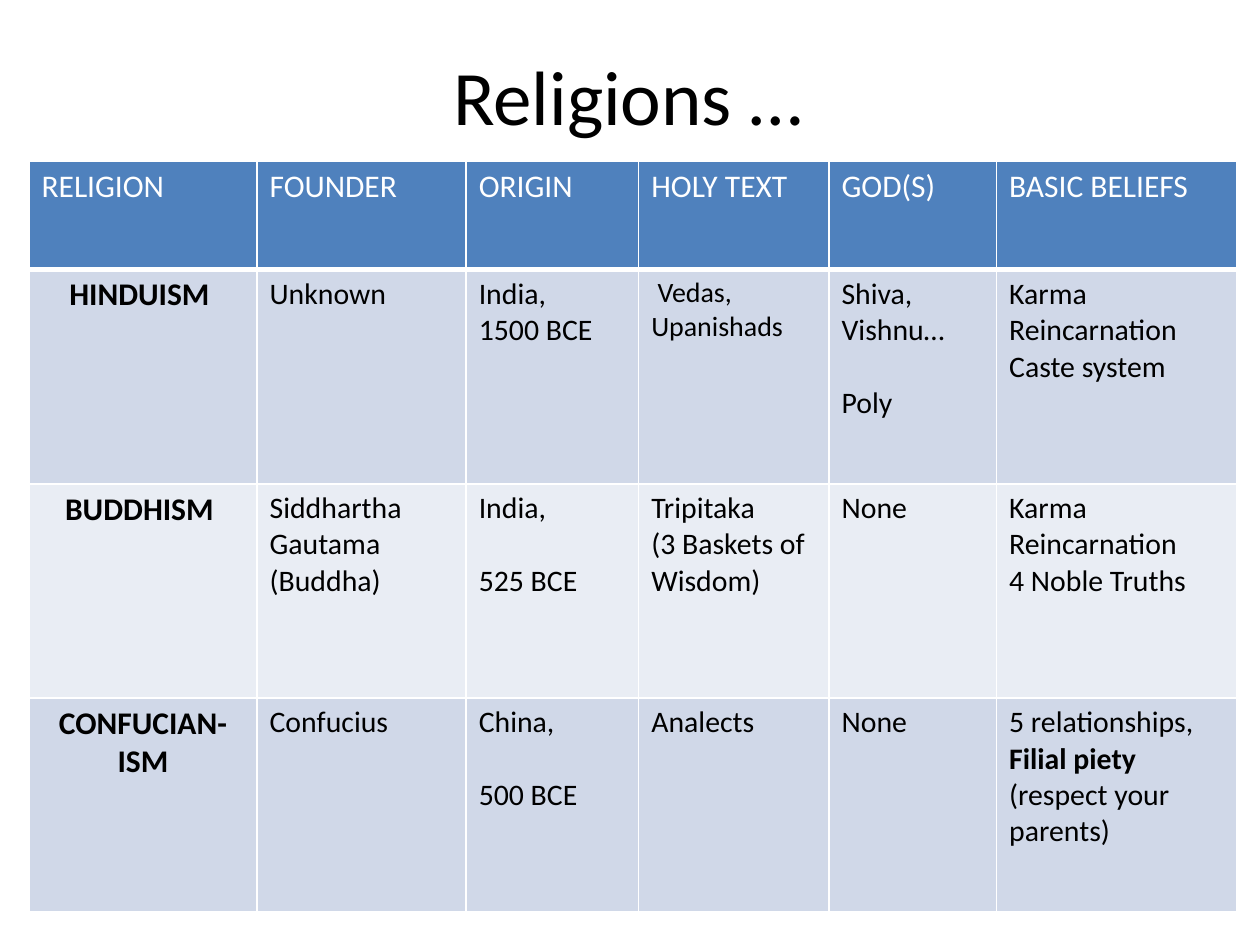
from dataclasses import dataclass

from lxml import etree
from pptx import Presentation
from pptx import util as u
from pptx.dml.color import RGBColor
from pptx.enum import text
from pptx.oxml import ns

FONT = "Calibri"
COLOURS = {
    "ink": "000000",
    "white": "FFFFFF",
    "header": "4F81BD",
    "odd_row": "D0D8E8",
    "even_row": "E9EDF4",
}
COLUMN_WIDTHS = [1.81, 1.66, 1.37, 1.51, 1.33, 1.91]
HEADER_HEIGHT, ROW_HEIGHT = 0.86, 1.7
BODY_SIZE = 17
LINE_GAP = 20.75  # one line of body text, in points
HEADINGS = ["RELIGION", "FOUNDER", "ORIGIN", "HOLY TEXT", "GOD(S)", "BASIC BELIEFS"]


@dataclass
class Line:
    words: str
    size: float = BODY_SIZE
    bold: str = ""  # leading words set in bold
    gap: float = 0


@dataclass
class Religion:
    name: str
    details: list[list[Line]]


RELIGIONS = [
    Religion("HINDUISM ", [
        [Line("Unknown")],
        [Line("India,"), Line("1500 BCE")],
        [Line(" Vedas,", size=16), Line("Upanishads", size=16)],
        [Line("Shiva, Vishnu…"), Line("Poly", gap=LINE_GAP)],
        [Line("Karma"), Line("Reincarnation"), Line("Caste system")],
    ]),
    Religion("BUDDHISM ", [
        [Line("Siddhartha Gautama"), Line("(Buddha)")],
        [Line("India,"), Line("525 BCE", gap=LINE_GAP)],
        [Line("Tripitaka"), Line("(3 Baskets of Wisdom)")],
        [Line("None")],
        [Line("Karma"), Line("Reincarnation"), Line("4 Noble Truths")],
    ]),
    Religion("CONFUCIAN-ISM", [
        [Line("Confucius")],
        [Line("China,"), Line("500 BCE", gap=LINE_GAP)],
        [Line("Analects")],
        [Line("None")],
        [Line("5 relationships,"), Line("(respect your parents)", bold="Filial piety ")],
    ]),
]


def colour(name: str) -> RGBColor:
    return RGBColor.from_string(COLOURS[name])


def add_span(para, words: str, *, size: float = BODY_SIZE, ink: str = "ink",
             bold: bool = False) -> None:
    span = para.add_run()
    span.text = words
    span.font.name = FONT
    span.font.size = u.Pt(size)
    span.font.bold = bold
    span.font.color.rgb = colour(ink)


def paint_cell(cell, fill: str, bottom: float = 1) -> None:
    """Fill a cell and give it white borders; widths are in points."""
    cell.fill.solid()
    cell.fill.fore_color.rgb = colour(fill)
    properties = cell._tc.get_or_add_tcPr()
    for index, (side, width) in enumerate({"L": 1, "R": 1, "T": 1, "B": bottom}.items()):
        border = etree.Element(ns.qn(f"a:ln{side}"), w=str(u.Pt(width)))
        solid = etree.SubElement(border, ns.qn("a:solidFill"))
        etree.SubElement(solid, ns.qn("a:srgbClr"), val=COLOURS["white"])
        properties.insert(index, border)


def write_lines(cell, lines: list[Line]) -> None:
    frame = cell.text_frame
    for index, line in enumerate(lines):
        para = frame.add_paragraph() if index else frame.paragraphs[0]
        para.space_before = u.Pt(line.gap)
        if line.bold:
            add_span(para, line.bold, size=line.size, bold=True)
        add_span(para, line.words, size=line.size)


def add_title(page, words: str) -> None:
    box = page.shapes.title
    box.left, box.top = u.Inches(0.47), u.Inches(0.18)
    box.width, box.height = u.Inches(9.03), u.Inches(1.14)
    box.text_frame.vertical_anchor = text.MSO_ANCHOR.MIDDLE
    para = box.text_frame.paragraphs[0]
    para.alignment = text.PP_ALIGN.CENTER
    add_span(para, words, size=44)


def add_religion_table(page) -> None:
    heights = [HEADER_HEIGHT] + [ROW_HEIGHT] * len(RELIGIONS)
    table = page.shapes.add_table(
        len(heights), len(COLUMN_WIDTHS), u.Inches(0.23), u.Inches(1.28),
        u.Inches(sum(COLUMN_WIDTHS)), u.Inches(sum(heights))).table
    for column, width in zip(table.columns, COLUMN_WIDTHS):
        column.width = u.Inches(width)
    for row, height in zip(table.rows, heights):
        row.height = u.Inches(height)

    for column, heading in enumerate(HEADINGS):
        cell = table.cell(0, column)
        paint_cell(cell, "header", bottom=3)
        add_span(cell.text_frame.paragraphs[0], heading, size=18, ink="white")

    for row, religion in enumerate(RELIGIONS, start=1):
        for column in range(len(HEADINGS)):
            paint_cell(table.cell(row, column), "odd_row" if row % 2 else "even_row")
        para = table.cell(row, 0).text_frame.paragraphs[0]
        para.alignment = text.PP_ALIGN.CENTER
        add_span(para, religion.name, size=18, bold=True)
        for column, lines in enumerate(religion.details, start=1):
            write_lines(table.cell(row, column), lines)


def main() -> None:
    deck = Presentation()
    deck.slide_width, deck.slide_height = u.Inches(10), u.Inches(7.5)
    page = deck.slides.add_slide(deck.slide_layouts[5])
    add_title(page, "Religions …")
    add_religion_table(page)
    deck.save("out.pptx")


if __name__ == "__main__":
    main()
